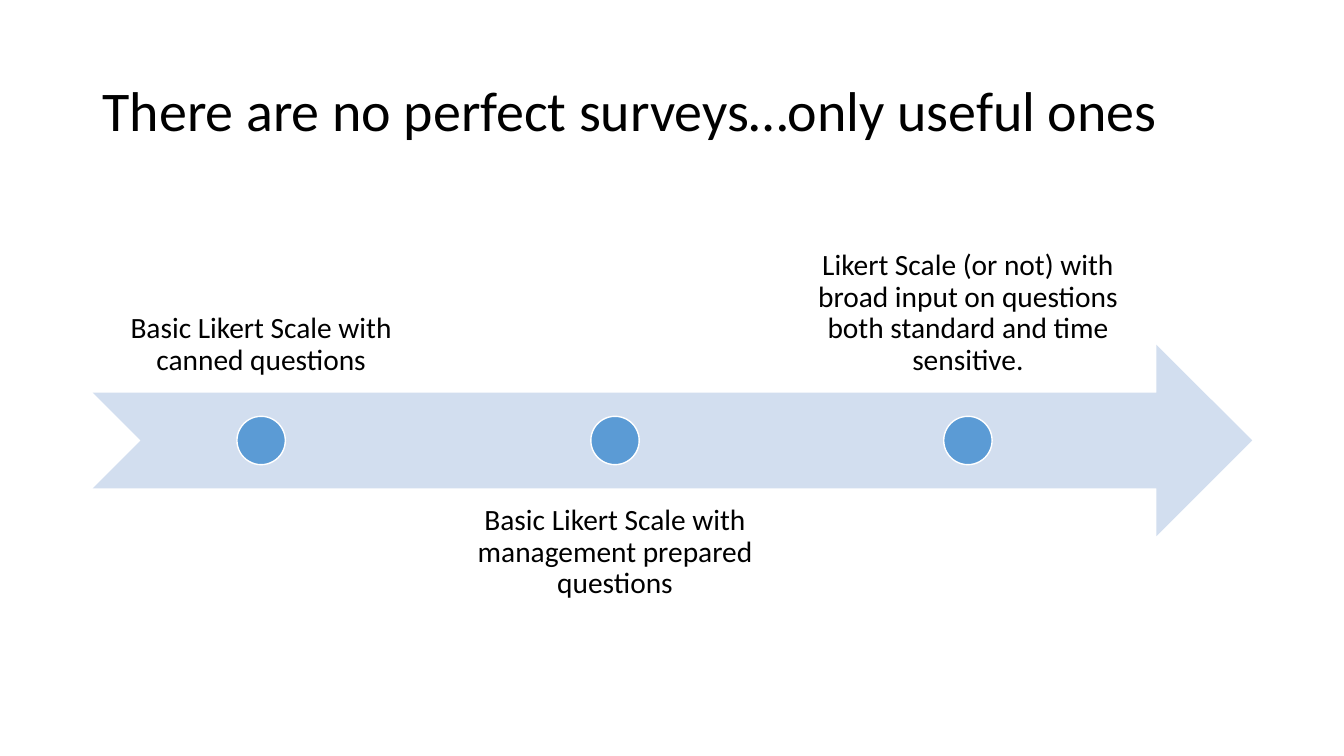
from pptx import Presentation
from pptx.dml.color import RGBColor
from pptx.enum.shapes import MSO_SHAPE
from pptx.enum.text import MSO_ANCHOR, PP_ALIGN
from pptx.util import Emu, Pt

# Content
TITLE = "There are no perfect surveys…only useful ones"
STAGES = [
    "Basic Likert Scale with canned questions",
    "Basic Likert Scale with management prepared questions",
    "Likert Scale (or not) with broad input on questions both standard and time sensitive.",
]

# Colours
BLACK = RGBColor(0x00, 0x00, 0x00)
WHITE = RGBColor(0xFF, 0xFF, 0xFF)
ARROW_BLUE = RGBColor(0xD2, 0xDE, 0xEF)
DOT_BLUE = RGBColor(0x5B, 0x9B, 0xD5)

# Layout in px, 100 to the inch
PX = 9144
LEFT, WIDTH = 92, 1150
TITLE_TOP, TITLE_HEIGHT = 40, 145
ARROW_TOP, BAND = 342, 190
ABOVE_TOP, BELOW_TOP = 200, 485
STAGE_WIDTH = 334
STAGE_STEP = STAGE_WIDTH * 1.05
DOT = 48

TITLE_FORMAT = {"name": "Calibri", "size": Pt(40)}
STAGE_FORMAT = {"name": "Calibri", "size": Pt(21)}


def box(*lengths):
    return [Emu(round(length) * PX) for length in lengths]


def add_text(slide, text, place, font_format, anchor, align, inset):
    frame = slide.shapes.add_textbox(*box(*place)).text_frame
    frame.word_wrap = True
    frame.vertical_anchor = anchor
    for side in ("left", "top", "right", "bottom"):
        if inset:
            setattr(frame, f"margin_{side}", Emu(inset * PX))
    paragraph = frame.paragraphs[0]
    paragraph.alignment = align
    paragraph.line_spacing = 0.9
    run = paragraph.add_run()
    run.text = text
    for key, value in font_format.items():
        setattr(run.font, key, value)
    run.font.color.rgb = BLACK


def add_filled(slide, kind, place, colour):
    shape = slide.shapes.add_shape(kind, *box(*place))
    shape.shadow.inherit = False
    shape.fill.solid()
    shape.fill.fore_color.rgb = colour
    return shape


def main():
    prs = Presentation()
    prs.slide_width, prs.slide_height = box(1333, 750)
    slide = prs.slides.add_slide(prs.slide_layouts[6])

    # Title
    add_text(slide, TITLE, (LEFT, TITLE_TOP, WIDTH, TITLE_HEIGHT), TITLE_FORMAT,
             MSO_ANCHOR.MIDDLE, PP_ALIGN.LEFT, None)

    # Timeline arrow
    arrow = add_filled(slide, MSO_SHAPE.NOTCHED_RIGHT_ARROW,
                       (LEFT, ARROW_TOP, WIDTH, BAND), ARROW_BLUE)
    arrow.line.fill.background()

    # Stages alternate above and below the arrow
    for index, stage in enumerate(STAGES):
        left = LEFT + index * STAGE_STEP
        above = index % 2 == 0
        top = ABOVE_TOP if above else BELOW_TOP
        anchor = MSO_ANCHOR.BOTTOM if above else MSO_ANCHOR.TOP
        add_text(slide, stage, (left, top, STAGE_WIDTH, BAND), STAGE_FORMAT,
                 anchor, PP_ALIGN.CENTER, 16)
        dot_left = left + (STAGE_WIDTH - DOT) / 2
        dot_top = ARROW_TOP + (BAND - DOT) / 2
        dot = add_filled(slide, MSO_SHAPE.OVAL, (dot_left, dot_top, DOT, DOT), DOT_BLUE)
        dot.line.color.rgb = WHITE
        dot.line.width = Pt(1)

    prs.save("out.pptx")


if __name__ == "__main__":
    main()
